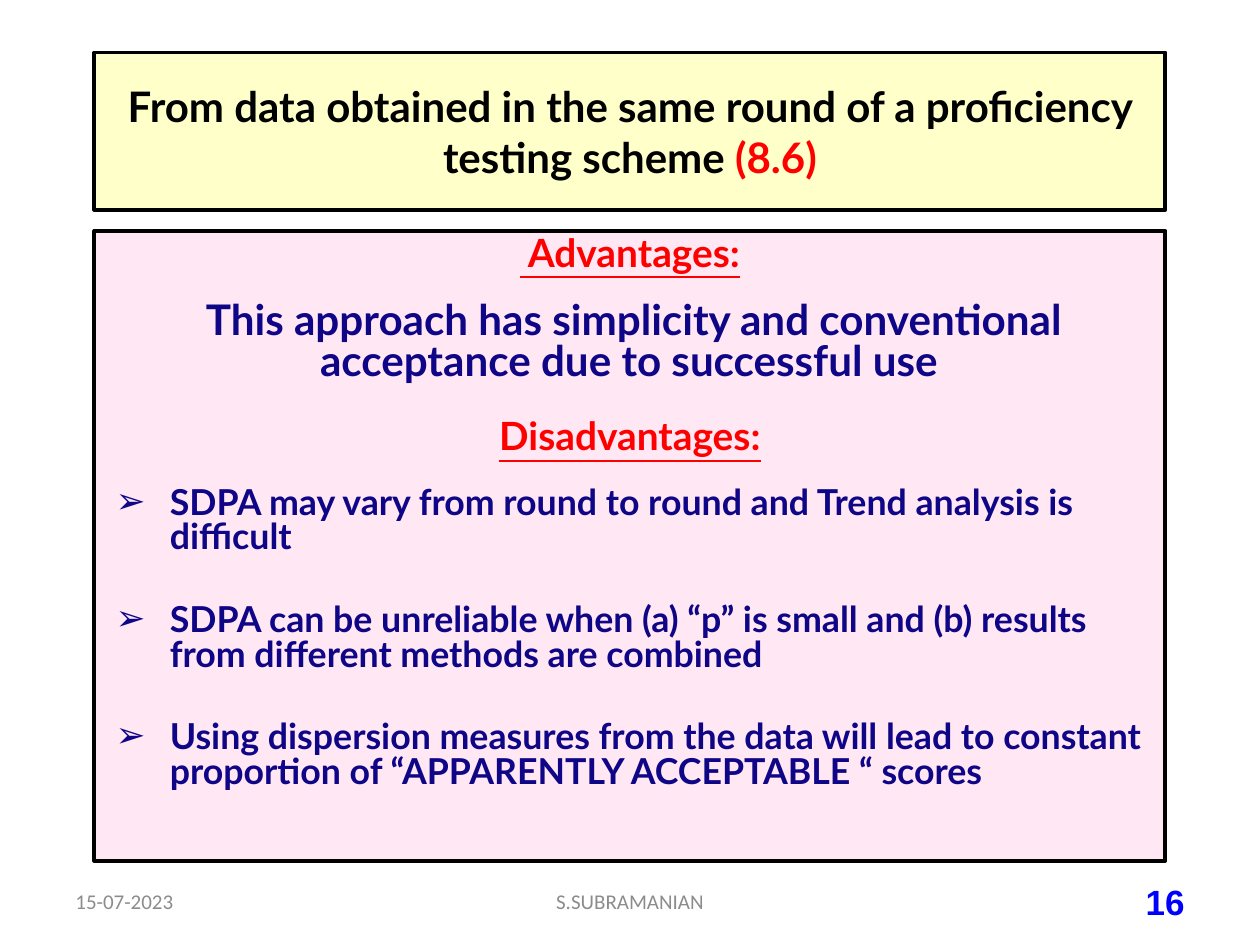
import pptx
import pptx.dml.color
import pptx.enum.shapes
import pptx.enum.text
import pptx.oxml.ns
import lxml.etree

Pt = pptx.util.Pt
ALIGN = pptx.enum.text.PP_ALIGN
ANCHOR = pptx.enum.text.MSO_ANCHOR
RED, NAVY, GREY = "FF0000", "0E0587", "8C8C8C"


def color(value):
    return pptx.dml.color.RGBColor.from_string(value)


def add_run(p, text, font="Lato", size=24, fill="000000", bold=True, underline=False):
    r = p.add_run()
    r.text = text
    r.font.name = font
    r.font.size = Pt(size)
    r.font.bold = bold
    r.font.underline = underline
    r.font.color.rgb = color(fill)


def set_indent(p, left, first=0, bullet=None):
    pPr = p._p.get_or_add_pPr()
    pPr.set("marL", str(Pt(left)))
    pPr.set("indent", str(Pt(first)))
    if bullet:
        qn = pptx.oxml.ns.qn
        lxml.etree.SubElement(pPr, qn("a:buFont"), typeface="Arial")
        lxml.etree.SubElement(pPr, qn("a:buChar"), char=bullet)


class Deck:
    line_width = 2.25
    line_spacing = 0.8

    def __init__(self, prs):
        self.slide = prs.slides.add_slide(prs.slide_layouts[6])

    def panel(self, top, height, fill, anchor):
        rect = pptx.enum.shapes.MSO_SHAPE.RECTANGLE
        sp = self.slide.shapes.add_shape(rect, Pt(54), Pt(top), Pt(612), Pt(height))
        sp.shadow.inherit = False
        sp.fill.solid()
        sp.fill.fore_color.rgb = color(fill)
        sp.line.color.rgb = color("000000")
        sp.line.width = Pt(self.line_width)
        tf = sp.text_frame
        tf.word_wrap = True
        tf.vertical_anchor = anchor
        return tf

    def paragraph(self, tf, text, before=0, align=ALIGN.CENTER, left=0, first=0,
                  bullet=None, **style):
        p = tf.add_paragraph() if tf.paragraphs[0].runs else tf.paragraphs[0]
        p.alignment = align
        p.line_spacing = self.line_spacing
        p.space_before = Pt(before)
        set_indent(p, left, first, bullet)
        add_run(p, text, **style)

    def footer(self, left, width, text, align, **style):
        sp = self.slide.shapes.add_textbox(Pt(left), Pt(500.5), Pt(width), Pt(28.75))
        tf = sp.text_frame
        tf.word_wrap = True
        tf.vertical_anchor = ANCHOR.MIDDLE
        p = tf.paragraphs[0]
        p.alignment = align
        add_run(p, text, **style)


def main():
    prs = pptx.Presentation()
    prs.slide_width, prs.slide_height = Pt(720), Pt(540)
    deck = Deck(prs)

    title = deck.panel(30, 90, "FFFFC9", ANCHOR.MIDDLE)
    p = title.paragraphs[0]
    p.alignment = ALIGN.CENTER
    add_run(p, "From data obtained in the same round of a proficiency testing scheme ")
    add_run(p, "(8.6)", fill=RED)

    body = deck.panel(132, 360, "FFE7F3", ANCHOR.TOP)
    heading = dict(size=22.2, fill=RED, underline=True)
    deck.paragraph(body, " Advantages:", **heading)
    deck.paragraph(
        body,
        "This approach has simplicity and conventional acceptance due to successful use ",
        before=16.5, left=5, size=24.1, fill=NAVY)
    deck.paragraph(body, "Disadvantages:", before=21, **heading)
    drawbacks = [
        "SDPA may vary from round to round and Trend analysis is difficult",
        "SDPA can be unreliable when (a) “p” is small and (b) results from different "
        "methods are combined",
        "Using dispersion measures from the data will lead to constant proportion of "
        "“APPARENTLY ACCEPTABLE “ scores",
    ]
    for i, text in enumerate(drawbacks):
        deck.paragraph(body, text, before=27.8 if i else 17, align=ALIGN.LEFT,
                       left=36, first=-31, bullet="➢", size=20.4, fill=NAVY)

    small = dict(font="Calibri", size=12, fill=GREY, bold=False)
    deck.footer(36, 168, "15-07-2023", ALIGN.LEFT, **small)
    deck.footer(246, 228, "S.SUBRAMANIAN", ALIGN.CENTER, **small)
    deck.footer(516, 168, "16", ALIGN.RIGHT, font="Arial", size=20, fill="0000FF")

    prs.save("out.pptx")


if __name__ == "__main__":
    main()
